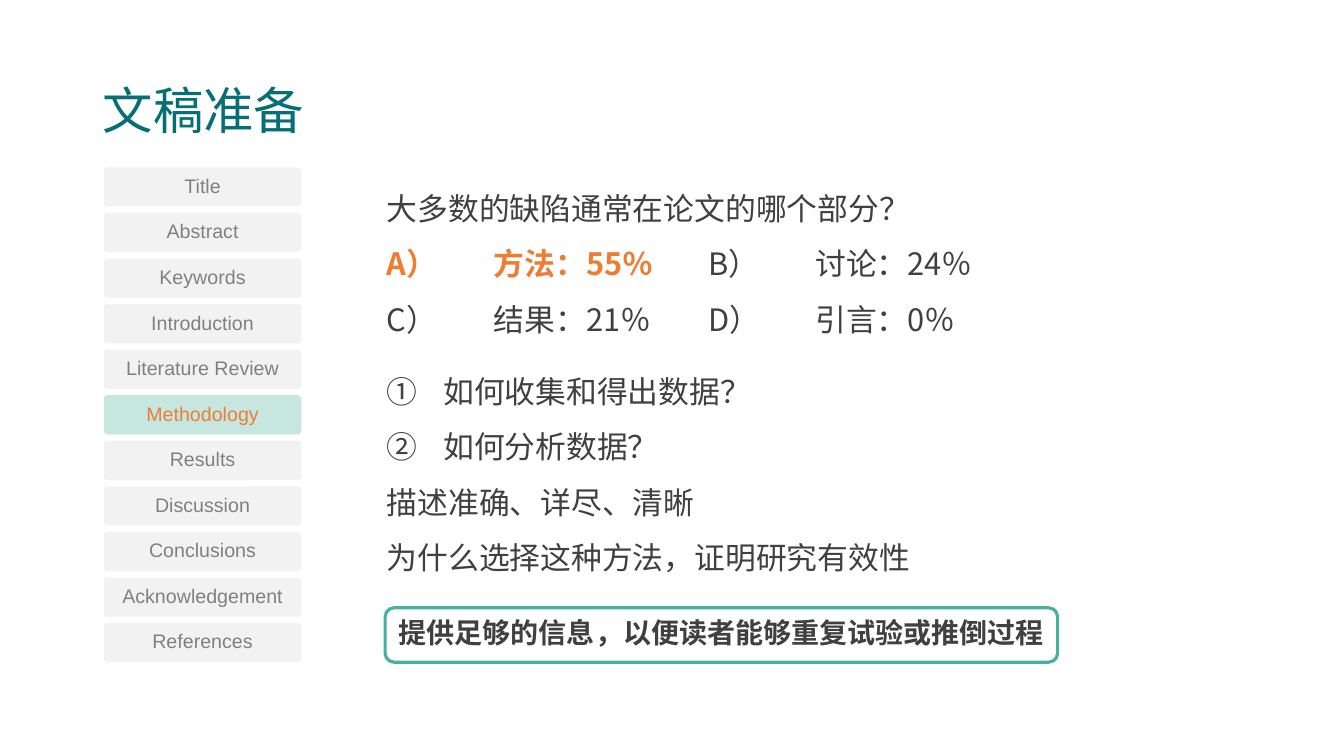
from lxml import etree
from pptx import Presentation
from pptx.dml.color import RGBColor
from pptx.enum.shapes import MSO_SHAPE
from pptx.enum.text import MSO_ANCHOR, PP_ALIGN
from pptx.oxml.ns import qn
from pptx.util import Inches, Pt

ROUND = MSO_SHAPE.ROUNDED_RECTANGLE
TOP, MIDDLE = MSO_ANCHOR.TOP, MSO_ANCHOR.MIDDLE
CENTER = PP_ALIGN.CENTER
SANS, CJK = "Arial", "Noto Sans CJK SC"

COLORS = {
    "title": "066E75", "text": "404040", "accent": "ED7D31", "muted": "808080",
    "tab": "F2F2F2", "active": "C7E6E0", "white": "FFFFFF", "frame": "49AFA0",
}
SECTIONS = ["Title", "Abstract", "Keywords", "Introduction",
            "Literature Review", "Methodology", "Results", "Discussion",
            "Conclusions", "Acknowledgement", "References"]
CURRENT = "Methodology"
STOPS = (1.06, 3.19, 4.25)
HANG = 0.56


def color(name):
    return RGBColor.from_string(COLORS[name])


def add_run(para, text, size, font, tint, bold=False):
    run = para.add_run()
    run.text = text
    run.font.size = Pt(size)
    run.font.name = font
    run.font.bold = bold
    run.font.color.rgb = color(tint)
    east = etree.SubElement(run._r.get_or_add_rPr(), qn("a:ea"))
    east.set("typeface", CJK)


def add_box(slide, left, top, width, height, anchor=TOP):
    box = slide.shapes.add_textbox(
        Inches(left), Inches(top), Inches(width), Inches(height))
    frame = box.text_frame
    frame.word_wrap = True
    frame.vertical_anchor = anchor
    return frame


def add_panel(slide, left, top, width, height, fill):
    shape = slide.shapes.add_shape(
        ROUND, Inches(left), Inches(top), Inches(width), Inches(height))
    shape.shadow.inherit = False
    shape.fill.solid()
    shape.fill.fore_color.rgb = color(fill)
    shape.line.fill.background()
    shape.text_frame.paragraphs[0].alignment = CENTER
    return shape


def add_tab(slide, row, name):
    active = name == CURRENT
    shape = add_panel(slide, 1.03, 1.66 + row * 0.452, 1.96, 0.39,
                      "active" if active else "tab")
    shape.adjustments[0] = 0.1
    frame = shape.text_frame
    frame.margin_left = frame.margin_right = Inches(0.01)
    frame.margin_top = frame.margin_bottom = Inches(0.01)
    frame.vertical_anchor = MIDDLE
    para = frame.paragraphs[0]
    para.line_spacing = 0.9
    add_run(para, name, 14, SANS, "accent" if active else "muted")


def add_line(frame, runs, stops=(), hang=False, number=False, before=0):
    """Add one body line; each run is (text, color, bold)."""
    para = frame.paragraphs[0]
    if para.runs:
        para = frame.add_paragraph()
    para.line_spacing = 1.5
    if before:
        para.space_before = Pt(before)
    props = para._p.get_or_add_pPr()
    if hang:
        props.set("marL", str(Inches(HANG)))
        props.set("indent", str(-Inches(HANG)))
    if number:
        etree.SubElement(props, qn("a:buAutoNum")).set("type", "circleNumDbPlain")
    if stops:
        tabs = etree.SubElement(props, qn("a:tabLst"))
        for stop in stops:
            etree.SubElement(tabs, qn("a:tab"), pos=str(Inches(stop)), algn="l")
    for text, tint, bold in runs:
        add_run(para, text, 22, CJK, tint, bold)


def add_body(slide):
    frame = add_box(slide, 3.74, 1.65, 6.76, 4.26)

    def plain(text):
        return [(text, "text", False)]

    # Quiz with its answers
    add_line(frame, plain("大多数的缺陷通常在论文的哪个部分？"))
    add_line(frame, [("A）\t方法：55％\t", "accent", True),
                     ("B）\t讨论：24％", "text", False)], STOPS)
    add_line(frame, plain("C）\t结果：21％\tD）\t引言：0％"), STOPS)
    # Points to cover
    add_line(frame, plain("如何收集和得出数据？"), hang=True, number=True, before=12)
    add_line(frame, plain("如何分析数据？"), hang=True, number=True)
    for text in ("描述准确、详尽、清晰", "为什么选择这种方法，证明研究有效性"):
        add_line(frame, plain(text), hang=True)


def add_note(slide):
    shape = add_panel(slide, 3.82, 6.03, 6.67, 0.54, "white")
    shape.line.color.rgb = color("frame")
    shape.line.width = Pt(2.25)
    shape.text_frame.vertical_anchor = TOP
    add_run(shape.text_frame.paragraphs[0],
            "提供足够的信息，以便读者能够重复试验或推倒过程", 20, CJK, "text", True)


def main():
    deck = Presentation()
    deck.slide_width, deck.slide_height = Inches(13.33), Inches(7.5)
    slide = deck.slides.add_slide(deck.slide_layouts[6])

    # Heading
    para = add_box(slide, 0.92, 0.4, 11.5, 1.45, MIDDLE).paragraphs[0]
    para.line_spacing = 0.9
    add_run(para, "文稿准备", 36, SANS, "title")

    # Main text and key message
    add_body(slide)
    add_note(slide)

    # Section list
    for row, name in enumerate(SECTIONS):
        add_tab(slide, row, name)

    deck.save("out.pptx")


if __name__ == "__main__":
    main()
